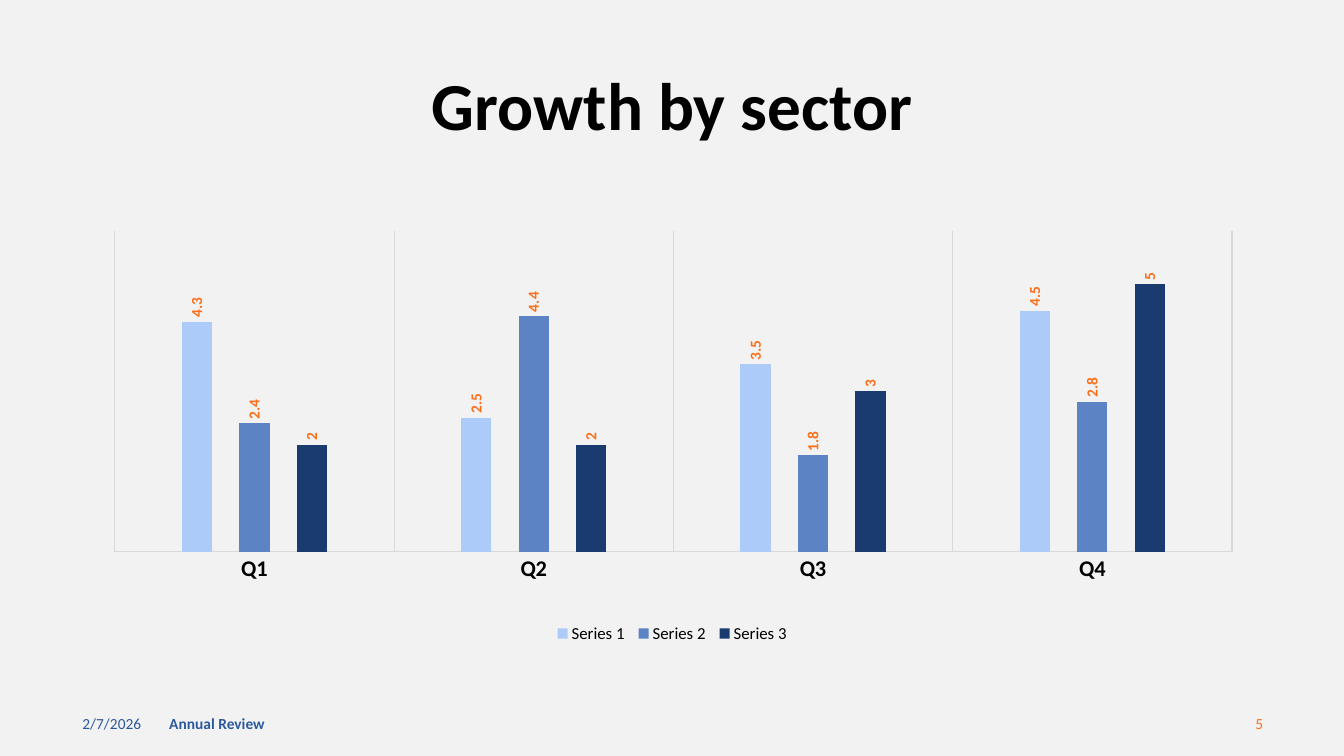
"""Build the "Growth by sector" slide with a clustered column chart."""
import pptx
import pptx.chart.data
import pptx.dml.color
import pptx.enum.chart
import pptx.enum.text
import pptx.oxml
import pptx.oxml.ns
import pptx.util

Pt = pptx.util.Pt
RGB = pptx.dml.color.RGBColor
ALIGN = pptx.enum.text.PP_ALIGN
XL = pptx.enum.chart

BACKGROUND = RGB(0xF2, 0xF2, 0xF2)
BLACK = RGB(0x00, 0x00, 0x00)
BLUE = RGB(0x2C, 0x59, 0x9D)
ORANGE = RGB(0xFA, 0x6F, 0x1A)
GRID = RGB(0xD9, 0xD9, 0xD9)
FONT = "Calibri"

FOOTER_TOP, FOOTER_HEIGHT = 502.6, 28.8
TEXTS = [
    ("2/7/2026", (51.8, FOOTER_TOP, 216, FOOTER_HEIGHT), 11, BLUE, False, ALIGN.LEFT),
    ("Annual Review", (113.8, FOOTER_TOP, 324, FOOTER_HEIGHT), 11, BLUE, True, ALIGN.LEFT),
    ("5", (693.4, FOOTER_TOP, 216, FOOTER_HEIGHT), 11, ORANGE, False, ALIGN.RIGHT),
    ("Growth by sector", (66.2, 49.7, 828, 55.4), 48, BLACK, True, ALIGN.CENTER),
]
QUARTERS = ["Q1", "Q2", "Q3", "Q4"]
SECTORS = [
    ("Series 1", (4.3, 2.5, 3.5, 4.5), RGB(0xAC, 0xCB, 0xF9)),
    ("Series 2", (2.4, 4.4, 1.8, 2.8), RGB(0x5C, 0x83, 0xC4)),
    ("Series 3", (2, 2, 3, 5), RGB(0x1A, 0x3B, 0x70)),
]
CHART_BOX = (61.9, 154.1, 836.6, 321.8)
PLOT_SHARE = {"x": 0.02, "y": 0.03, "w": 0.95, "h": 0.71}
PLOT_SHARE = {"x": 0.024, "y": 0.033, "w": 0.954, "h": 0.713}
LEGEND_SHARE = {"x": 0.395, "y": 0.9, "w": 0.21, "h": 0.055}


def style(font, size, color, bold=False):
    font.name, font.size, font.bold = FONT, Pt(size), bold
    font.color.rgb = color


def add_text(slide, words, box, size, color, bold, align):
    frame = slide.shapes.add_textbox(*map(Pt, box)).text_frame
    frame.word_wrap = True
    frame.vertical_anchor = pptx.enum.text.MSO_ANCHOR.MIDDLE
    frame.text = words
    line = frame.paragraphs[0]
    line.alignment = align
    if size > 40:
        line.line_spacing = 0.9
    style(line.runs[0].font, size, color, bold)


def chart_xml(tag, content):
    namespaces = pptx.oxml.ns.nsdecls("c", "a")
    return pptx.oxml.parse_xml(f"<c:{tag} {namespaces}>{content}</c:{tag}>")


def manual_layout(parent, share, target=""):
    for old in parent.findall(pptx.oxml.ns.qn("c:layout")):
        parent.remove(old)
    modes = "".join(f'<c:{side}Mode val="edge"/>' for side in "xy")
    sizes = "".join(f'<c:{key} val="{part}"/>' for key, part in share.items())
    return chart_xml("layout", f"<c:manualLayout>{target}{modes}{sizes}</c:manualLayout>")


def add_growth_chart(slide):
    data = pptx.chart.data.CategoryChartData()
    data.categories = QUARTERS
    for name, values, _ in SECTORS:
        data.add_series(name, values)
    chart = slide.shapes.add_chart(
        XL.XL_CHART_TYPE.COLUMN_CLUSTERED, *map(Pt, CHART_BOX), data).chart
    chart.has_title = False
    style(chart.font, 10, BLACK)

    quarters_axis, values_axis = chart.category_axis, chart.value_axis
    values_axis.minimum_scale, values_axis.maximum_scale = 0, 6
    values_axis.has_major_gridlines = False
    values_axis.visible = False
    quarters_axis.major_tick_mark = XL.XL_TICK_MARK.NONE
    quarters_axis.has_major_gridlines = True
    style(quarters_axis.tick_labels.font, 16, BLACK, True)
    for line in (quarters_axis.format.line, quarters_axis.major_gridlines.format.line):
        line.color.rgb, line.width = GRID, Pt(0.75)

    plot = chart.plots[0]
    plot.gap_width, plot.overlap, plot.vary_by_categories = 444, -90, False
    for series, (_, _, color) in zip(plot.series, SECTORS):
        series.format.fill.solid()
        series.format.fill.fore_color.rgb = color
        labels = series.data_labels
        labels.show_value = True
        labels.position = XL.XL_LABEL_POSITION.OUTSIDE_END
        style(labels.font, 11, ORANGE, True)
        turn = labels._element.find(".//" + pptx.oxml.ns.qn("a:bodyPr"))
        turn.set("rot", "-5400000")
        turn.set("vert", "horz")

    chart.has_legend = True
    legend = chart.legend
    legend.position = XL.XL_LEGEND_POSITION.TOP
    legend.include_in_layout = False
    style(legend.font, 12, BLACK)
    legend_layout = manual_layout(legend._element, LEGEND_SHARE)
    legend._element.find(pptx.oxml.ns.qn("c:legendPos")).addnext(legend_layout)

    chart_root = chart._chartSpace.find(pptx.oxml.ns.qn("c:chart"))
    plot_area = chart_root.find(pptx.oxml.ns.qn("c:plotArea"))
    plot_area.insert(0, manual_layout(plot_area, PLOT_SHARE, '<c:layoutTarget val="inner"/>'))
    chart_root.addnext(chart_xml("spPr", "<a:noFill/><a:ln><a:noFill/></a:ln>"))


def main():
    deck = pptx.Presentation()
    deck.slide_width, deck.slide_height = Pt(960), Pt(540)
    slide = deck.slides.add_slide(deck.slide_layouts[6])
    slide.background.fill.solid()
    slide.background.fill.fore_color.rgb = BACKGROUND
    for text in TEXTS:
        add_text(slide, *text)
    add_growth_chart(slide)
    deck.save("out.pptx")


if __name__ == "__main__":
    main()
